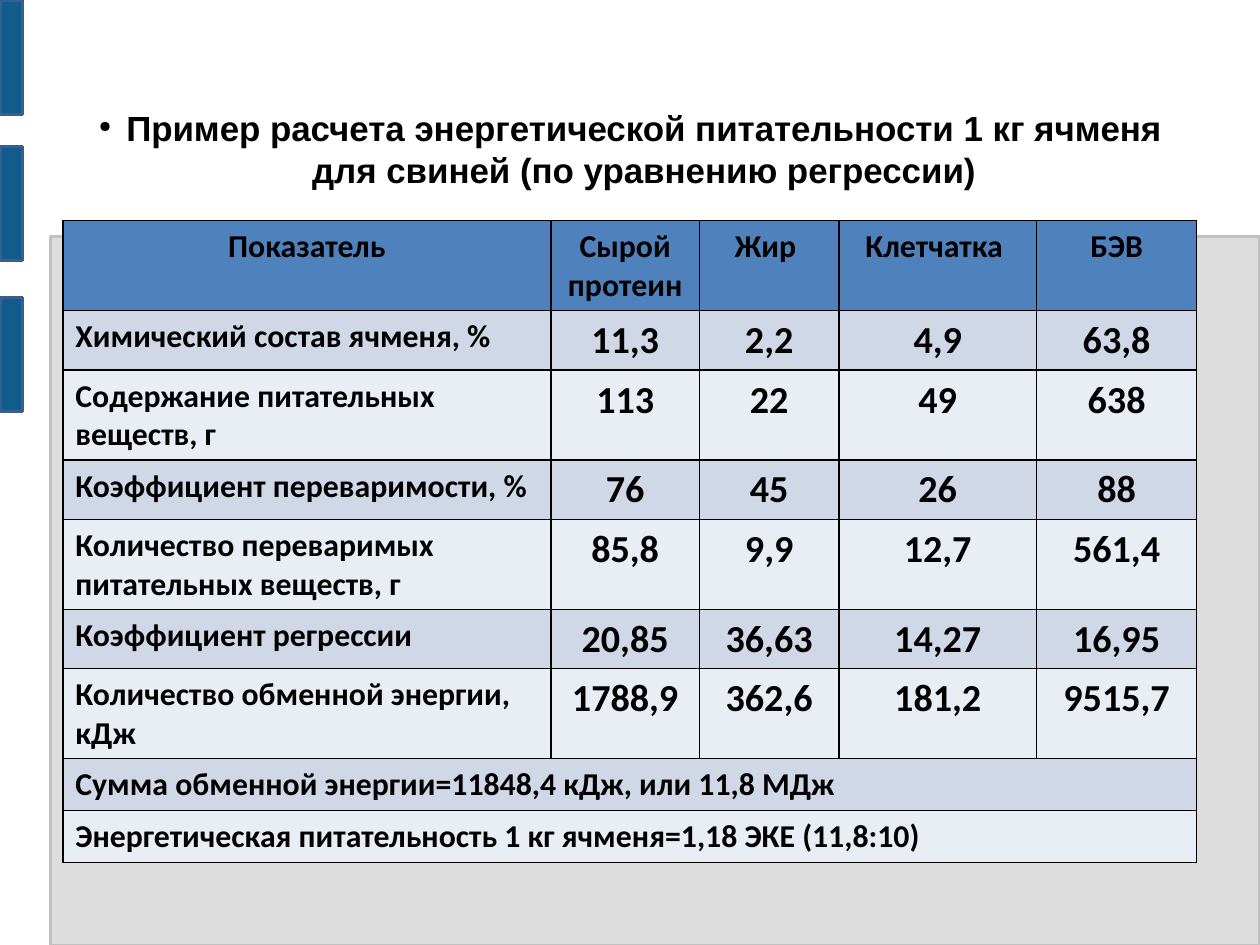
from lxml.etree import SubElement
from pptx import Presentation
from pptx.dml.color import RGBColor
from pptx.enum.shapes import MSO_SHAPE
from pptx.enum.text import MSO_ANCHOR, PP_ALIGN
from pptx.oxml.ns import qn
from pptx.util import Inches, Pt

BLACK = RGBColor(0x00, 0x00, 0x00)
PANEL_GREY = RGBColor(0xDD, 0xDD, 0xDD)
PANEL_EDGE = RGBColor(0xC0, 0xC0, 0xC0)
BAR_BLUE = RGBColor(0x12, 0x5C, 0x8D)
BAR_EDGE = RGBColor(0x3A, 0x5F, 0x8C)
HEADER_BLUE = RGBColor(0x4F, 0x81, 0xBD)
BAND_DARK = RGBColor(0xD0, 0xD8, 0xE8)
BAND_LIGHT = RGBColor(0xE9, 0xED, 0xF4)

COLUMN_WIDTHS = [4.27, 1.3, 1.22, 1.73, 1.4]
ROWS = [
    (0.77, ["Показатель", "Сырой протеин", "Жир ", "Клетчатка ", "БЭВ"]),
    (0.45, ["Химический состав ячменя, %", "11,3", "2,2", "4,9", "63,8"]),
    (0.77, ["Содержание питательных веществ, г", "113", "22", "49", "638"]),
    (0.45, ["Коэффициент переваримости, %", "76", "45", "26", "88"]),
    (0.77, ["Количество переваримых питательных веществ, г", "85,8", "9,9", "12,7", "561,4"]),
    (0.45, ["Коэффициент регрессии", "20,85", "36,63", "14,27", "16,95"]),
    (0.77, ["Количество обменной энергии, кДж", "1788,9", "362,6", "181,2", "9515,7"]),
    (0.45, ["Сумма обменной энергии=11848,4 кДж, или 11,8 МДж"]),
    (0.45, ["Энергетическая питательность 1 кг ячменя=1,18 ЭКЕ (11,8:10)"]),
]


def add_block(left, top, width, height, fill, edge):
    block = page.shapes.add_shape(
        MSO_SHAPE.RECTANGLE, Inches(left), Inches(top), Inches(width), Inches(height))
    block.shadow.inherit = False
    block.fill.solid()
    block.fill.fore_color.rgb = fill
    block.line.color.rgb = edge
    block.line.width = Pt(2)


def add_borders(cell):
    properties = cell._tc.get_or_add_tcPr()
    for position, side in enumerate(["lnL", "lnR", "lnT", "lnB"]):
        border = SubElement(properties, qn(f"a:{side}"), w=str(Pt(1)))
        fill = SubElement(border, qn("a:solidFill"))
        SubElement(fill, qn("a:srgbClr"), val=str(BLACK))
        properties.insert(position, border)


deck = Presentation()
deck.slide_width = Inches(28 / 2.54)
deck.slide_height = Inches(21 / 2.54)
page = deck.slides.add_slide(deck.slide_layouts[6])

add_block(0.44, 2.07, 10.58, 6.2, PANEL_GREY, PANEL_EDGE)
for top in [0, 2.6, 1.28]:
    add_block(0, top, 0.2, 1, BAR_BLUE, BAR_EDGE)

title = page.shapes.add_textbox(Inches(0.81), Inches(0.61), Inches(9.41), Inches(1.38))
frame = title.text_frame
frame.word_wrap = True
frame.vertical_anchor = MSO_ANCHOR.MIDDLE
frame.margin_left = frame.margin_right = frame.margin_top = frame.margin_bottom = 0
heading = frame.paragraphs[0]
heading.text = "Пример расчета энергетической питательности 1 кг ячменя для свиней (по уравнению регрессии)"
heading.alignment = PP_ALIGN.CENTER
heading.font.name = "Arial"
heading.font.size = Pt(22)
heading.font.bold = True
heading.font.color.rgb = BLACK
bullet = heading._p.get_or_add_pPr()
bullet.set("marL", str(Inches(0.24)))
bullet.set("indent", str(Inches(-0.24)))
bullet_size = SubElement(bullet, qn("a:buSzPct"), val="45000")
bullet_sign = SubElement(bullet, qn("a:buChar"), char="●")
bullet.insert(0, bullet_size)
bullet.insert(1, bullet_sign)

table_frame = page.shapes.add_table(
    len(ROWS), len(COLUMN_WIDTHS), Inches(0.55), Inches(1.93), Inches(9.92), Inches(5.53))
table = table_frame.table
for column, width in zip(table.columns, COLUMN_WIDTHS):
    column.width = Inches(width)

for row_index, (height, texts) in enumerate(ROWS):
    table.rows[row_index].height = Inches(height)
    if row_index == 0:
        row_fill = HEADER_BLUE
    else:
        row_fill = BAND_DARK if row_index % 2 else BAND_LIGHT
    for cell in table.rows[row_index].cells:
        cell.fill.solid()
        cell.fill.fore_color.rgb = row_fill
        add_borders(cell)
    if len(texts) == 1:
        table.cell(row_index, 0).merge(table.cell(row_index, len(COLUMN_WIDTHS) - 1))
    for column_index, text in enumerate(texts):
        cell = table.cell(row_index, column_index)
        cell.margin_left = cell.margin_right = Inches(0.11)
        cell.margin_top = cell.margin_bottom = Inches(0.06)
        para = cell.text_frame.paragraphs[0]
        para.text = text
        is_label = row_index > 0 and column_index == 0
        is_value = row_index > 0 and column_index > 0
        para.alignment = PP_ALIGN.LEFT if is_label else PP_ALIGN.CENTER
        para.font.name = "Calibri"
        para.font.size = Pt(24 if is_value else 20)
        para.font.bold = True
        para.font.color.rgb = BLACK
table_frame.height = Inches(5.53)

deck.save("out.pptx")
